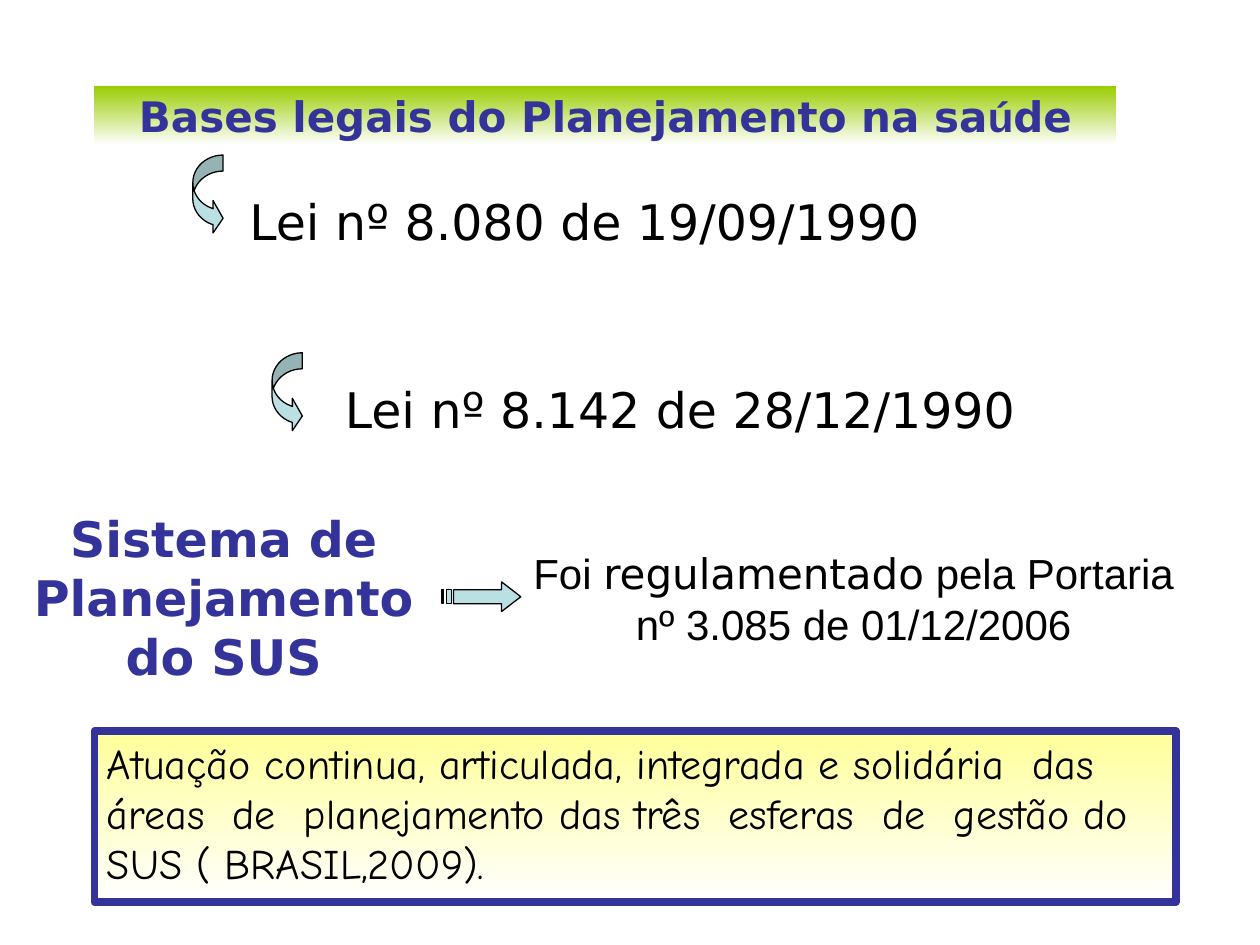
from dataclasses import dataclass

from pptx import Presentation
from pptx.dml.color import RGBColor
from pptx.enum.shapes import MSO_SHAPE
from pptx.enum.text import MSO_ANCHOR, PP_ALIGN
from pptx.util import Pt


@dataclass(frozen=True)
class Theme:
    blue: str = "333399"
    black: str = "000000"
    white: str = "FFFFFF"
    green: str = "99CC00"
    yellow: str = "FFFF99"
    aqua: str = "BBE0E3"
    sans: str = "DejaVu Sans"
    plain: str = "Arial"
    comic: str = "Comic Neue"
    body: float = 24
    large: float = 28


THEME = Theme()


def color(code):
    return RGBColor.from_string(code)


def write(shape, *runs, font=THEME.sans, size=THEME.body, ink=THEME.black,
          bold=False, align=PP_ALIGN.LEFT, anchor=MSO_ANCHOR.TOP):
    """Fill a shape with one paragraph; a run is text or a (text, font) pair."""
    frame = shape.text_frame
    frame.word_wrap = True
    frame.vertical_anchor = anchor
    para = frame.paragraphs[0]
    para.alignment = align
    for item in runs:
        text, face = (item, font) if isinstance(item, str) else item
        run = para.add_run()
        run.text = text
        run.font.name = face
        run.font.size = Pt(size)
        run.font.bold = bold
        run.font.color.rgb = color(ink)


def label(slide, box, *runs, **style):
    write(slide.shapes.add_textbox(*map(Pt, box)), *runs, **style)


def outline(shape, ink, width):
    shape.line.color.rgb = color(ink)
    shape.line.width = Pt(width)


def panel(slide, box, top):
    """Add a rectangle that fades downwards from a colour to white."""
    shape = slide.shapes.add_shape(MSO_SHAPE.RECTANGLE, *map(Pt, box))
    shape.shadow.inherit = False
    shape.fill.gradient()
    shape.fill.gradient_angle = 270
    for stop, code, place in zip(shape.fill.gradient_stops,
                                 (top, THEME.white), (0, 1)):
        stop.color.rgb = color(code)
        stop.position = place
    shape.line.fill.background()
    return shape


def tint(shape):
    """Give an arrow its common look."""
    shape.shadow.inherit = False
    shape.fill.solid()
    shape.fill.fore_color.rgb = color(THEME.aqua)
    outline(shape, THEME.black, 0.75)


def curl(slide, left, top):
    shape = slide.shapes.add_shape(MSO_SHAPE.CURVED_RIGHT_ARROW,
                                   Pt(left), Pt(top), Pt(17.3), Pt(45.4))
    for i, value in enumerate((0.53, 1.07, 0.33)):
        shape.adjustments[i] = value
    tint(shape)


def striped(slide):
    """Add the arrow with two bars behind its tail."""
    high, low = 337, 345
    neck, tip, mid = 286.6, 297.6, 341
    head = [(neck, mid - 8.5), (neck, high), (259.2, high), (259.2, low),
            (neck, low), (neck, mid + 8.5), (tip, mid)]
    bars = [[(a, high), (a, low), (b, low), (b, high)]
            for a, b in ((255, 257.9), (252.5, 253.4))]
    paths = [[(Pt(x), Pt(y)) for x, y in path] for path in (head, *bars)]
    pen = slide.shapes.build_freeform(*paths[0][0], scale=1.0)
    for i, path in enumerate(paths):
        if i:
            pen.move_to(*path[0])
        pen.add_line_segments(path[1:], close=True)
    tint(pen.convert_to_shape())


def main():
    deck = Presentation()
    deck.slide_width, deck.slide_height = Pt(720), Pt(540)
    slide = deck.slides.add_slide(deck.slide_layouts[6])

    label(slide, (8.6, 287.3, 238.3, 108), "Sistema de Planejamento do SUS",
          size=THEME.large, ink=THEME.blue, bold=True, align=PP_ALIGN.CENTER)
    label(slide, (292.3, 309.6, 391, 64.8), "Foi ",
          ("regulamentado", THEME.sans),
          " pela Portaria nº 3.085 de 01/12/2006",
          font=THEME.plain, align=PP_ALIGN.CENTER)
    striped(slide)

    note = panel(slide, (54, 417.6, 617.8, 98), THEME.yellow)
    outline(note, THEME.blue, 4.5)
    write(note, "Atuação continua, articulada, integrada e solidária  das "
          "áreas  de  planejamento das três  esferas  de  gestão do "
          "SUS ( BRASIL,2009).", font=THEME.comic)

    title = panel(slide, (54, 49, 584, 33.8), THEME.green)
    write(title, "Bases legais do Planejamento na sa", ("ú", THEME.plain),
          "de", ink=THEME.blue, bold=True, align=PP_ALIGN.CENTER,
          anchor=MSO_ANCHOR.MIDDLE)

    curl(slide, 110.2, 88.6)
    label(slide, (135.4, 105.8, 491, 41), "Lei nº 8.080 de 19/09/1990",
          size=THEME.large)
    label(slide, (190, 213.1, 430.6, 41), "Lei nº 8.142 de 28/12/1990",
          size=THEME.large)
    curl(slide, 155.5, 201.6)

    deck.save("out.pptx")


if __name__ == "__main__":
    main()
